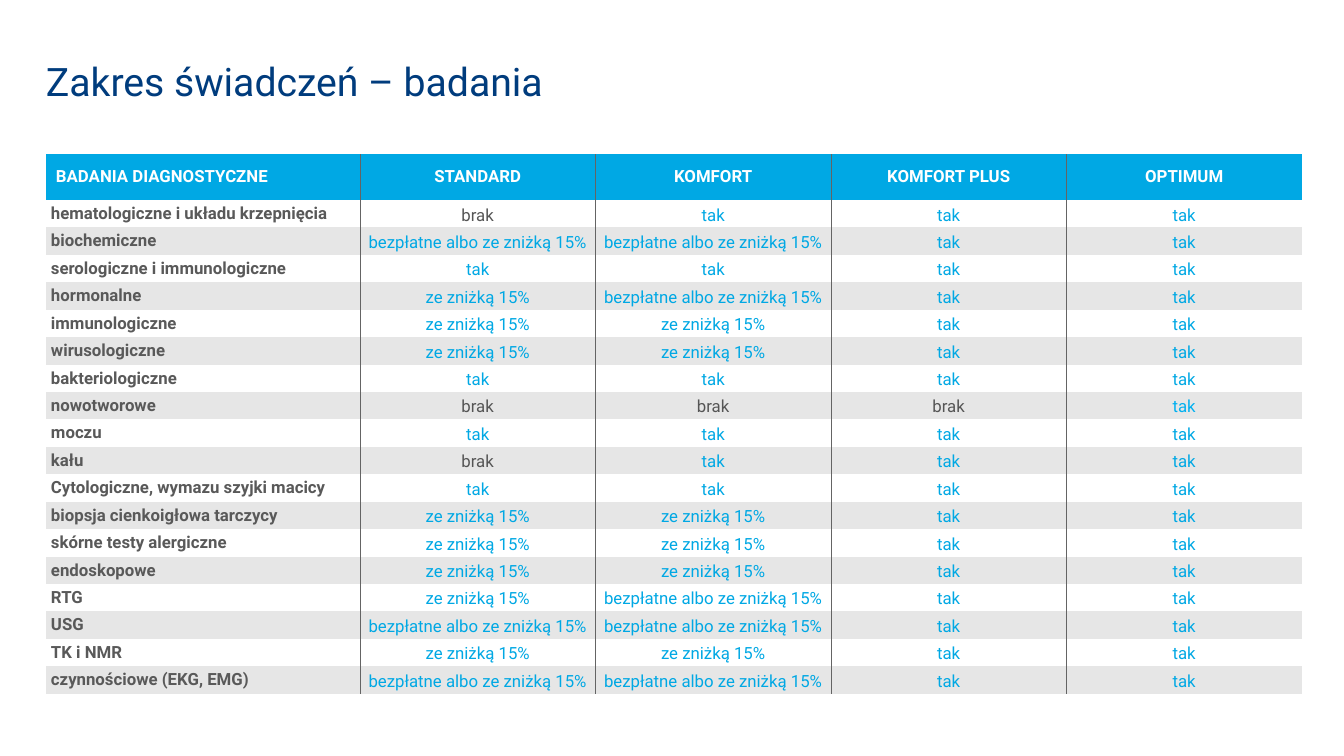
from dataclasses import astuple, dataclass

from lxml.etree import SubElement
from pptx import Presentation
from pptx.dml.color import RGBColor
from pptx.enum.text import MSO_ANCHOR as Anchor, MSO_AUTO_SIZE as AutoSize, PP_ALIGN as Align
from pptx.oxml.ns import qn
from pptx.slide import Slide
from pptx.table import _Cell as Cell
from pptx.util import Emu, Pt


@dataclass(frozen=True)
class Theme:
    font: str = "Roboto"
    title_size: int = 28
    table_size: int = 12
    rule_width: float = 0.5
    navy: str = "003C7D"
    blue: str = "00A8E4"
    bright_blue: str = "00B0F0"
    white: str = "FFFFFF"
    band: str = "E6E6E6"
    rule: str = "646464"
    label: str = "595959"
    missing: str = "555555"


THEME = Theme()


def px(length: int) -> Emu:
    return Emu(round(length * 914400 / 100.8))


@dataclass(frozen=True)
class Benefit:
    text: str
    color: str = THEME.blue


YES = Benefit("tak")
BRIGHT_YES = Benefit("tak", THEME.bright_blue)
NO = Benefit("brak", THEME.missing)
DISCOUNT = Benefit("ze zniżką 15%")
FREE_OR_DISCOUNT = Benefit("bezpłatne albo ze zniżką 15%")


@dataclass(frozen=True)
class Examination:
    name: str
    standard: Benefit = YES
    comfort: Benefit = YES
    comfort_plus: Benefit = YES
    optimum: Benefit = YES

    def benefits(self) -> list[Benefit]:
        return [self.standard, self.comfort, self.comfort_plus, self.optimum]


@dataclass(frozen=True)
class CellStyle:
    bold: bool
    align: Align
    margin_x: int
    margin_y: int = 0
    indent: int = 0
    space_after: float = 0
    line_spacing: float = 1.0


@dataclass(frozen=True)
class Box:
    left: int
    top: int
    width: int
    height: int

    def emu(self) -> list[Emu]:
        return [px(length) for length in astuple(self)]


TITLE_BOX = Box(46, 51, 917, 59)
TABLE_BOX = Box(46, 154, 1256, 540)
LABEL_WIDTH = 314
HEADER_HEIGHT = 46

HEADERS = ["BADANIA DIAGNOSTYCZNE", "STANDARD", "KOMFORT", "KOMFORT PLUS", "OPTIMUM"]
HEADER_LABEL = CellStyle(True, Align.LEFT, 10, 4)
HEADER_PLAN = CellStyle(True, Align.CENTER, 10, 4)
ROW_LABEL = CellStyle(True, Align.LEFT, 1, indent=4, space_after=2.4)
ROW_BENEFIT = CellStyle(False, Align.CENTER, 2, line_spacing=1.15)

EXAMINATIONS = [
    Examination("hematologiczne i układu krzepnięcia", NO),
    Examination("biochemiczne", FREE_OR_DISCOUNT, FREE_OR_DISCOUNT),
    Examination("serologiczne i immunologiczne"),
    Examination("hormonalne", DISCOUNT, FREE_OR_DISCOUNT),
    Examination("immunologiczne", DISCOUNT, DISCOUNT),
    Examination("wirusologiczne", DISCOUNT, DISCOUNT),
    Examination("bakteriologiczne"),
    Examination("nowotworowe", NO, NO, NO, BRIGHT_YES),
    Examination("moczu"),
    Examination("kału", NO),
    Examination("Cytologiczne, wymazu szyjki macicy"),
    Examination("biopsja cienkoigłowa tarczycy", DISCOUNT, DISCOUNT),
    Examination("skórne testy alergiczne", DISCOUNT, DISCOUNT),
    Examination("endoskopowe", DISCOUNT, DISCOUNT),
    Examination("RTG", DISCOUNT, FREE_OR_DISCOUNT),
    Examination("USG", FREE_OR_DISCOUNT, FREE_OR_DISCOUNT),
    Examination("TK i NMR", DISCOUNT, DISCOUNT),
    Examination("czynnościowe (EKG, EMG)", FREE_OR_DISCOUNT, FREE_OR_DISCOUNT),
]


def add_run(paragraph, text: str, size: int, color: str, bold: bool = False) -> None:
    run = paragraph.add_run()
    run.text = text
    run.font.name = THEME.font
    run.font.size = Pt(size)
    run.font.bold = bold
    run.font.color.rgb = RGBColor.from_string(color)


def set_borders(cell: Cell, ruled: set[str]) -> None:
    properties = cell._tc.get_or_add_tcPr()
    for side in "LRTB":
        line = SubElement(properties, qn(f"a:ln{side}"), w=str(Pt(THEME.rule_width)))
        if side in ruled:
            SubElement(SubElement(line, qn("a:solidFill")), qn("a:srgbClr"), val=THEME.rule)
        else:
            SubElement(line, qn("a:noFill"))


def fill_cell(cell: Cell, text: str, color: str, style: CellStyle,
              background: str | None, ruled: set[str]) -> None:
    set_borders(cell, ruled)
    if background:
        cell.fill.solid()
        cell.fill.fore_color.rgb = RGBColor.from_string(background)
    else:
        cell.fill.background()
    cell.vertical_anchor = Anchor.MIDDLE
    cell.margin_left = cell.margin_right = px(style.margin_x)
    cell.margin_top = cell.margin_bottom = px(style.margin_y)
    paragraph = cell.text_frame.paragraphs[0]
    paragraph.alignment = style.align
    paragraph.line_spacing = style.line_spacing
    paragraph.space_after = Pt(style.space_after)
    paragraph._p.get_or_add_pPr().set("marL", str(px(style.indent)))
    add_run(paragraph, text, THEME.table_size, color, style.bold)


def add_title(slide: Slide, text: str) -> None:
    title = slide.shapes.title
    title.left, title.top, title.width, title.height = TITLE_BOX.emu()
    frame = title.text_frame
    frame.margin_left = frame.margin_right = frame.margin_top = frame.margin_bottom = 0
    frame.vertical_anchor = Anchor.MIDDLE
    frame.auto_size = AutoSize.NONE
    frame.word_wrap = True
    frame.paragraphs[0].alignment = Align.LEFT
    add_run(frame.paragraphs[0], text, THEME.title_size, THEME.navy)


def add_benefit_table(slide: Slide) -> None:
    last = len(HEADERS) - 1
    table = slide.shapes.add_table(len(EXAMINATIONS) + 1, len(HEADERS), *TABLE_BOX.emu()).table
    table.first_row = table.horz_banding = False

    # Label column and header row are fixed; the rest is shared equally
    for index, column in enumerate(table.columns):
        column.width = px(TABLE_BOX.width - LABEL_WIDTH) // last if index else px(LABEL_WIDTH)
    body_height = px(TABLE_BOX.height - HEADER_HEIGHT)
    for index, row in enumerate(table.rows):
        row.height = body_height // len(EXAMINATIONS) if index else px(HEADER_HEIGHT)

    # Rules run only between columns
    rules = [{"R"}, *[{"L", "R"}] * (last - 1), {"L"}]

    for column, header in enumerate(HEADERS):
        style = HEADER_PLAN if column else HEADER_LABEL
        fill_cell(table.cell(0, column), header, THEME.white, style, THEME.blue, rules[column])

    for row, examination in enumerate(EXAMINATIONS, start=1):
        background = None if row % 2 else THEME.band
        fill_cell(table.cell(row, 0), examination.name, THEME.label, ROW_LABEL,
                  background, rules[0])
        for column, benefit in enumerate(examination.benefits(), start=1):
            fill_cell(table.cell(row, column), benefit.text, benefit.color, ROW_BENEFIT,
                      background, rules[column])


def main() -> None:
    deck = Presentation()
    deck.slide_width, deck.slide_height = px(1344), px(756)
    slide = deck.slides.add_slide(deck.slide_layouts[5])
    add_title(slide, "Zakres świadczeń – badania")
    add_benefit_table(slide)
    deck.save("out.pptx")


if __name__ == "__main__":
    main()
